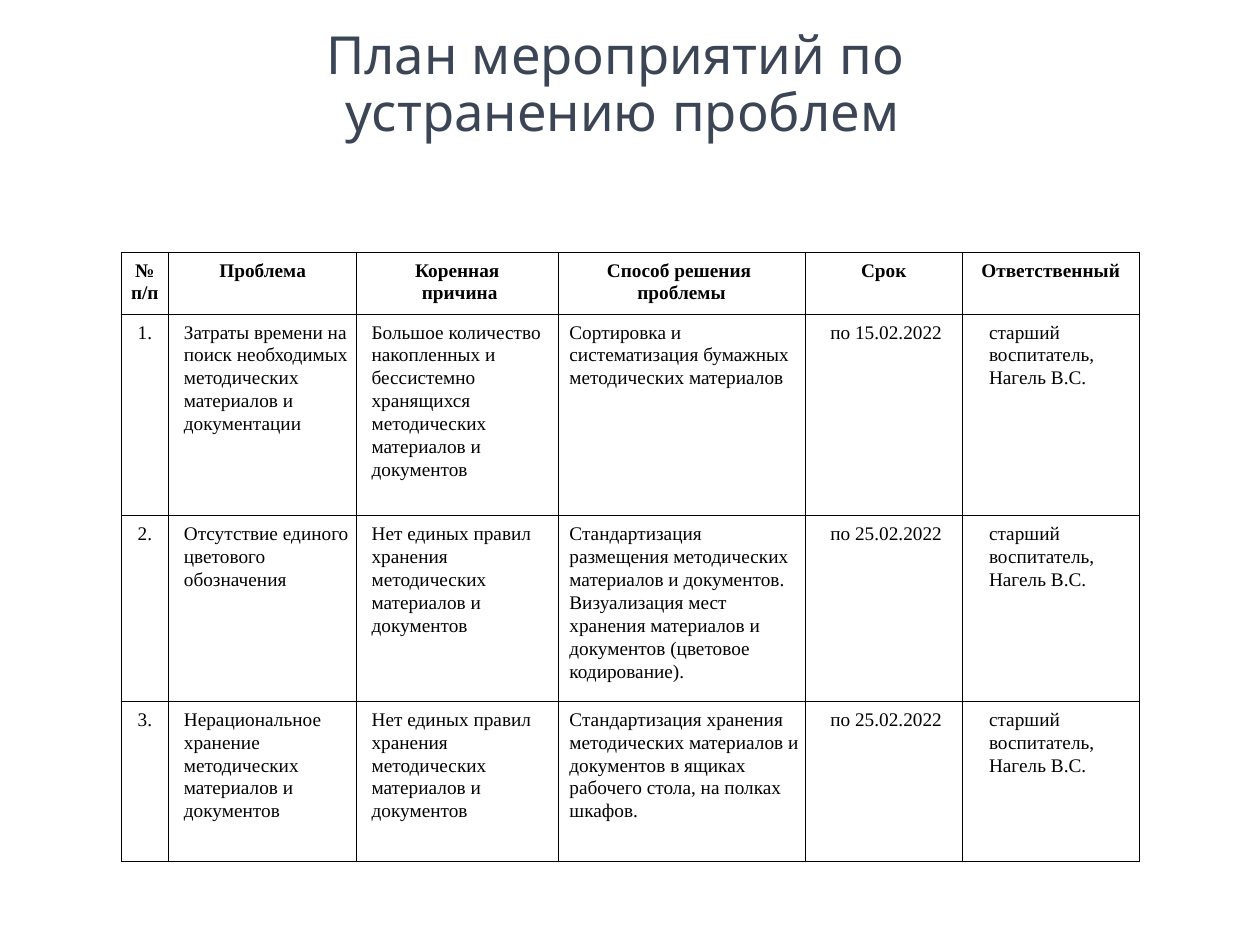
"""Build the slide with the action plan table."""
from lxml import etree
from pptx import Presentation
from pptx.dml.color import RGBColor
from pptx.enum.text import MSO_ANCHOR, PP_ALIGN
from pptx.oxml.ns import qn
from pptx.util import Inches, Pt

CENTER, LEFT = PP_ALIGN.CENTER, PP_ALIGN.LEFT
MIDDLE = MSO_ANCHOR.MIDDLE
SLATE = RGBColor(0x3B, 0x45, 0x55)
BLACK = RGBColor(0, 0, 0)

COLS = [0.38, 1.49, 1.6, 1.96, 1.25, 1.4]
ROWS = [0.48, 1.6, 1.4, 1.27]
INSETS = [0.01, 0.01, 0.01, 0.01, 0.1, 0.1]
INDENTS = [0, 0.11, 0.11, 0.08, 0.1, 0.11]
OWNER = ["старший воспитатель, Нагель В.С."]
RULES = ["Нет единых правил хранения методических материалов и документов"]
DATA = [
    [["№ п/п"], ["Проблема"], ["Коренная", " причина"],
     ["Способ решения ", "проблемы"], ["Срок"], ["Ответственный"]],
    [["1."],
     ["Затраты времени на поиск необходимых",
      "методических материалов и документации"],
     ["Большое количество накопленных и бессистемно хранящихся "
      "методических материалов и", "документов"],
     ["Сортировка и систематизация бумажных методических материалов"],
     ["по 15.02.2022"], OWNER],
    [["2."], ["Отсутствие единого цветового обозначения"], RULES,
     ["Стандартизация размещения методических материалов и документов.",
      "Визуализация мест хранения материалов и документов "
      "(цветовое кодирование)."],
     ["по 25.02.2022"], OWNER],
    [["3."],
     ["Нерациональное хранение методических материалов и документов"], RULES,
     ["Стандартизация хранения методических материалов и документов "
      "в ящиках рабочего стола, на полках шкафов."],
     ["по 25.02.2022"], OWNER],
]


def set_font(font, color, **values):
    for name, value in values.items():
        setattr(font, name, value)
    font.color.rgb = color


def add_borders(cell):
    tcPr = cell._tc.get_or_add_tcPr()
    for side in ("a:lnL", "a:lnR", "a:lnT", "a:lnB"):
        ln = etree.SubElement(tcPr, qn(side), w=str(Pt(0.45)))
        fill = etree.SubElement(ln, qn("a:solidFill"))
        etree.SubElement(fill, qn("a:srgbClr"), val=str(BLACK))


prs = Presentation()
prs.slide_width, prs.slide_height = Inches(10), Inches(7.5)
s = prs.slides.add_slide(prs.slide_layouts[6])

sp = s.shapes.add_textbox(Inches(1.3), Inches(0.13), Inches(7.17), Inches(1.11))
tf = sp.text_frame
tf.word_wrap = True
tf.vertical_anchor = MIDDLE
p = tf.paragraphs[0]
p.alignment = CENTER
p.line_spacing = 0.9
for i, line in enumerate(["План мероприятий по", " устранению проблем"]):
    if i:
        p.add_line_break()
    r = p.add_run()
    r.text = line
    set_font(r.font, SLATE, size=Pt(30), name="Quicksand")

sp = s.shapes.add_table(len(ROWS), len(COLS), Inches(0.96), Inches(2),
                        Inches(sum(COLS)), Inches(sum(ROWS)))
table = sp.table
table.first_row = table.horz_banding = False
for col, width in zip(table.columns, COLS):
    col.width = Inches(width)
for row, height in zip(table.rows, ROWS):
    row.height = Inches(height)

for i, texts in enumerate(DATA):
    for j, lines in enumerate(texts):
        cell = table.cell(i, j)
        cell.margin_left = cell.margin_right = Inches(INSETS[j])
        cell.margin_top = cell.margin_bottom = Inches(0.05)
        add_borders(cell)
        cell.fill.background()
        centered = i == 0 or j == 0
        tf = cell.text_frame
        for k, line in enumerate(lines):
            p = tf.add_paragraph() if k else tf.paragraphs[0]
            p.alignment = CENTER if centered else LEFT
            p.line_spacing = 1.07
            if not centered:
                p._p.get_or_add_pPr().set("marL", str(Inches(INDENTS[j])))
            r = p.add_run()
            r.text = line
            set_font(r.font, BLACK, size=Pt(11), name="Times New Roman",
                     bold=i == 0)

prs.save("out.pptx")
